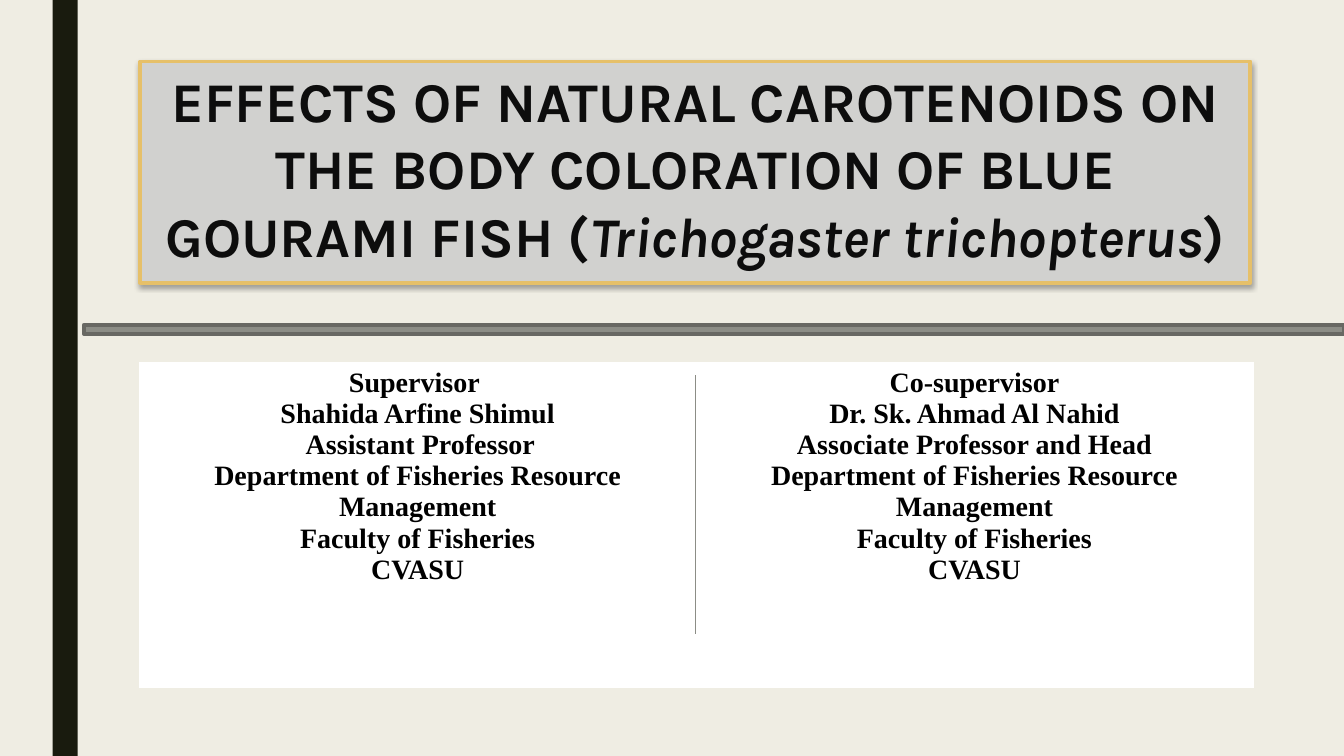
import pptx
import pptx.util
import pptx.dml.color
import pptx.enum.shapes
import pptx.enum.text
import pptx.oxml
import pptx.oxml.ns

Pt = pptx.util.Pt
CENTER = pptx.enum.text.PP_ALIGN.CENTER
RECTANGLE = pptx.enum.shapes.MSO_SHAPE.RECTANGLE
NAMESPACE = pptx.oxml.ns.nsdecls("a")

theme = {
    "background": "EFEDE3", "band": "191B0E", "panel": "D1D1CF", "gold": "E6C069",
    "rule": "8C8D86", "rule edge": "686863", "white": "FFFFFF",
    "title": {"name": "Karla", "size": Pt(40), "bold": True, "color": "0D0D0D"},
    "body": {"name": "Times New Roman", "size": Pt(20), "bold": True, "color": "000000"},
}


def color(value):
    return pptx.dml.color.RGBColor.from_string(value)


def add_span(para, text, style):
    span = para.add_run()
    span.text = text
    for name, value in style.items():
        if name == "color":
            span.font.color.rgb = color(value)
        else:
            setattr(span.font, name, value)


deck = pptx.Presentation()
deck.slide_width, deck.slide_height = Pt(960), Pt(540)
page = deck.slides.add_slide(deck.slide_layouts[6])
page.background.fill.solid()
page.background.fill.fore_color.rgb = color(theme["background"])

# Side band, title panel and horizontal rule
rectangles = {
    "band": (37.5, 0, 18, 540, None),
    "panel": (100, 44, 793.2, 158, "gold"),
    "rule": (60, 232, 900, 6.5, "rule edge"),
}
boxes = {}
for fill, (left, top, width, height, edge) in rectangles.items():
    box = page.shapes.add_shape(RECTANGLE, Pt(left), Pt(top), Pt(width), Pt(height))
    box.shadow.inherit = False
    box.fill.solid()
    box.fill.fore_color.rgb = color(theme[fill])
    if edge:
        box.line.color.rgb = color(theme[edge])
        box.line.width = Pt(2.75)
    else:
        box.line.fill.background()
    boxes[fill] = box

# Soft shadow below the title panel
effects = boxes["panel"]._element.spPr.find(pptx.oxml.ns.qn("a:effectLst"))
effects.append(pptx.oxml.parse_xml(
    f'<a:outerShdw {NAMESPACE} blurRad="{Pt(3.5)}" dist="{Pt(2.2)}" dir="5400000" rotWithShape="0">'
    '<a:srgbClr val="000000"><a:alpha val="32000"/></a:srgbClr></a:outerShdw>'))

# Title text
frame = boxes["panel"].text_frame
frame.word_wrap = True
frame.vertical_anchor = pptx.enum.text.MSO_ANCHOR.MIDDLE
frame.margin_bottom = Pt(10.8)
para = frame.paragraphs[0]
para.alignment = CENTER
para.line_spacing = Pt(48.2)
for text, italic in (
    ("EFFECTS OF NATURAL CAROTENOIDS ON THE BODY COLORATION OF BLUE GOURAMI FISH (", False),
    ("Trichogaster trichopterus", True),
    (")", False),
):
    add_span(para, text, theme["title"] | {"italic": italic})

# Supervisors table
department = ["Department of Fisheries Resource Management", "Faculty of Fisheries", "CVASU"]
supervisors = [
    ["Supervisor ", "Shahida Arfine Shimul", " Assistant Professor"],
    ["Co-supervisor", "Dr. Sk. Ahmad Al Nahid", "Associate Professor and Head"],
]
table = page.shapes.add_table(1, 2, Pt(99.5), Pt(259), Pt(795.5), Pt(231)).table
borders = {"lnL": 1, "lnR": 1, "lnT": 1, "lnB": 3}
for cell, person in zip(table.rows[0].cells, supervisors):
    for index, text in enumerate(person + department):
        para = cell.text_frame.paragraphs[0] if index == 0 else cell.text_frame.add_paragraph()
        para.alignment = CENTER
        add_span(para, text, theme["body"])
    for tag, width in borders.items():
        cell._tc.get_or_add_tcPr().append(pptx.oxml.parse_xml(
            f'<a:{tag} {NAMESPACE} w="{Pt(width)}"><a:solidFill>'
            f'<a:srgbClr val="{theme["white"]}"/></a:solidFill></a:{tag}>'))
    cell.fill.solid()
    cell.fill.fore_color.rgb = color(theme["white"])

# Divider between the supervisors
divider = page.shapes.add_connector(
    pptx.enum.shapes.MSO_CONNECTOR.STRAIGHT, Pt(497), Pt(268), Pt(497), Pt(453))
divider.line.color.rgb = color(theme["rule"])
divider.line.width = Pt(0.5)
divider._element.spPr.append(pptx.oxml.parse_xml(f"<a:effectLst {NAMESPACE}/>"))

deck.save("out.pptx")
